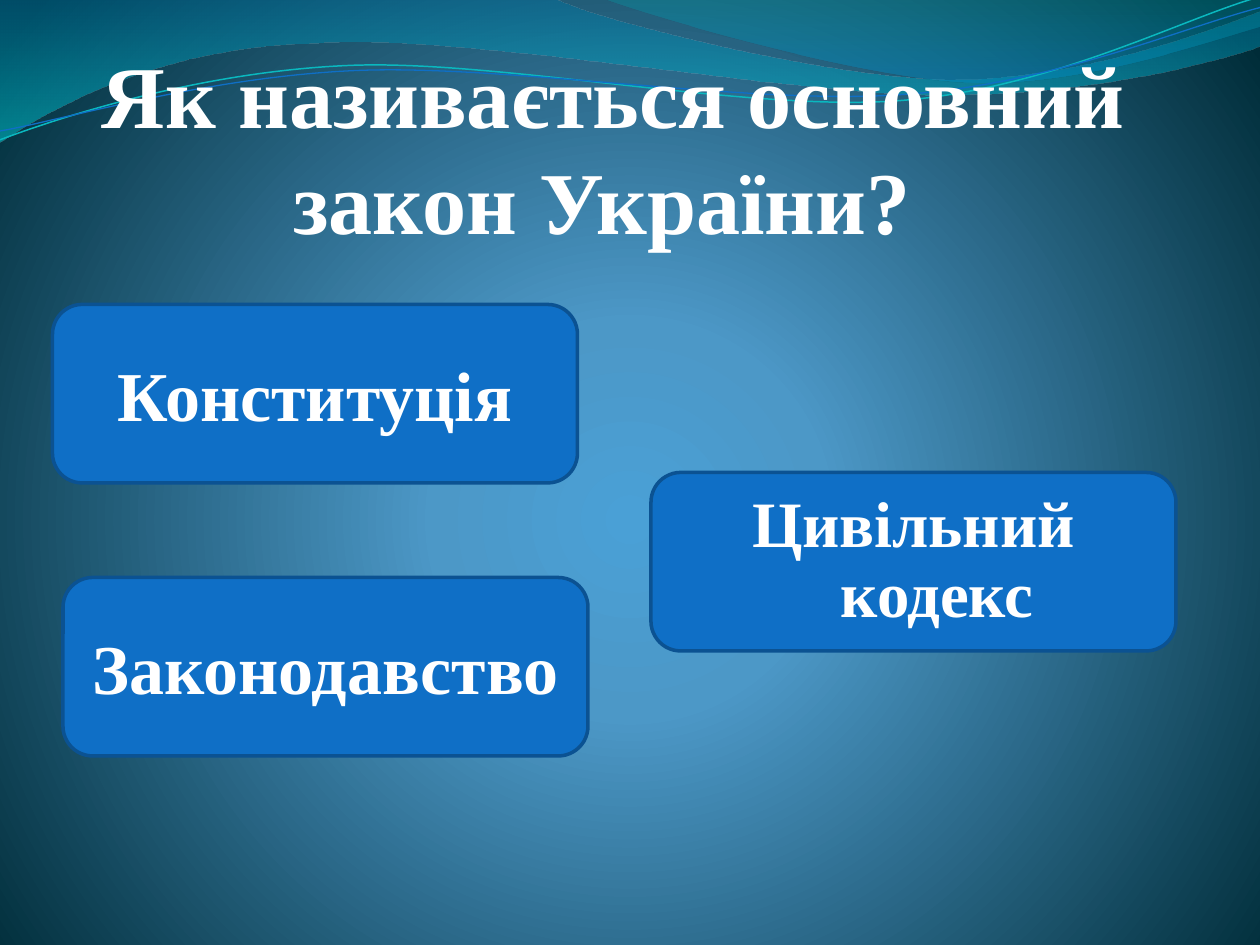
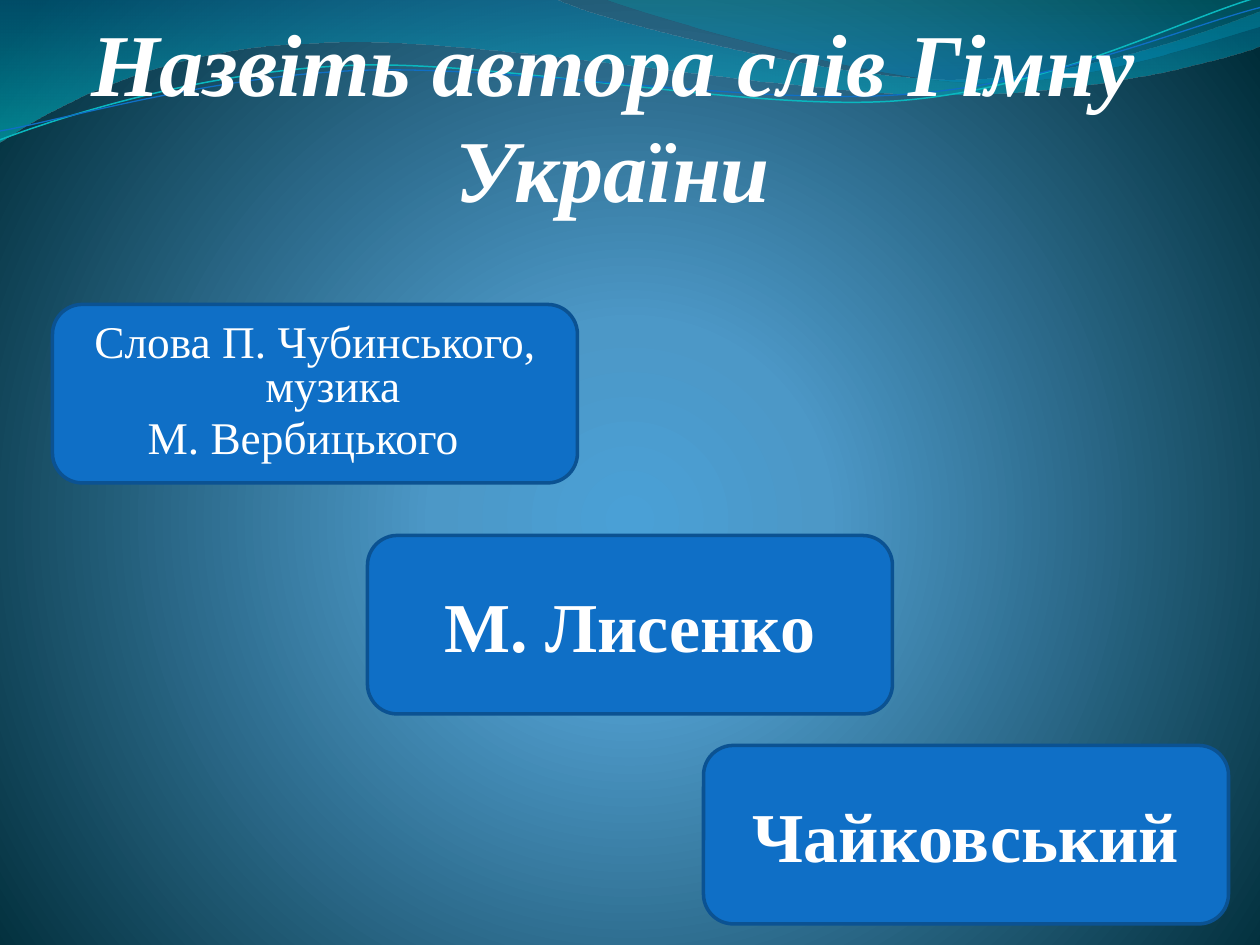
"""Builds two quiz slides on the constitution and anthem of Ukraine."""
from dataclasses import dataclass

from lxml import etree
from pptx import Presentation
from pptx.dml.color import RGBColor
from pptx.enum.shapes import MSO_SHAPE
from pptx.enum.text import MSO_ANCHOR, PP_ALIGN
from pptx.oxml.ns import qn
from pptx.util import Inches, Pt

ROUNDED = MSO_SHAPE.ROUNDED_RECTANGLE
CENTER = PP_ALIGN.CENTER
MIDDLE, BOTTOM = MSO_ANCHOR.MIDDLE, MSO_ANCHOR.BOTTOM


@dataclass(frozen=True)
class Theme:
    font: str = "Times New Roman"
    text: str = "FFFFFF"
    button: str = "0F6FC6"
    border: str = "0B5292"
    cyan: str = "0AB8BF"
    title_size: float = 50.4
    answer_size: float = 40
    background: tuple = (("4AA0D6", 0, 100), ("4C98C7", 25, 100), ("002C38", 100, 100))
    wide_band: tuple = (("0074A1", 0, 45), ("00C6CF", 100, 55))
    right_band: tuple = (("00A1A9", 0, 30), ("008BBF", 80, 45))


T = Theme()
GRID = 12
BUTTON_SIZE = (50, 17)
TITLE_LEFT, TITLE_SIZE = 0.58, (8.59, 1.75)
HANGING = 0.375

# Answer positions count twelfths of an inch.
QUESTIONS = [
    {"title": "Як називається основний закон України? ", "top": 0.25, "italic": False,
     "answers": [
         {"at": (5, 29), "lines": ["Конституція"]},
         {"at": (6, 55), "lines": ["Законодавство"]},
         {"at": (62, 45), "lines": ["Цивільний кодекс"], "size": 37, "spacing": 0.9},
     ]},
    {"title": "Назвіть автора слів Гімну України", "top": 0, "italic": True,
     "answers": [
         {"at": (5, 29), "lines": ["Слова П. Чубинського, музика ", "М. Вербицького "],
          "size": 25.9, "spacing": 0.8, "bold": False, "last_right": 0.1},
         {"at": (35, 51), "lines": ["М. Лисенко"]},
         {"at": (67, 71), "lines": ["Чайковський"]},
     ]},
]

# Each segment holds one end point, or two control points and an end point.
BANDS = [
    (T.wide_band, (0, 0), [
        [(4.4, -0.01)],
        [(4.76, 0.17), (6.64, 0.63), (7.58, 0.63)],
        [(8.53, 0.63), (9.58, 0.26), (10, 0.09)],
        [(10.01, 0.36)],
        [(9.83, 0.44), (8.7, 0.76), (7.46, 0.75)],
        [(6.22, 0.75), (3.82, 0.28), (2.57, 0.34)],
        [(1.29, 0.36), (0.46, 0.83), (-0.01, 1.13)],
        [(0, 0)],
    ]),
    (T.right_band, (4.79, -0.01), [
        [(5.09, 0.11), (6.82, 0.62), (7.69, 0.65)],
        [(8.56, 0.69), (9.61, 0.32), (10, 0.21)],
        [(10, 0)],
        [(4.79, -0.01)],
    ]),
]
WAVES = [
    (T.cyan, 0.85, (0, 1.11), [
        [(0.48, 0.93), (1.58, 0.57), (2.77, 0.52)],
        [(3.95, 0.47), (5.93, 0.89), (7.13, 0.8)],
        [(8.33, 0.71), (9.38, 0.15), (9.98, -0.02)],
    ]),
    (T.button, 0.75, (0, 1.04), [
        [(0.47, 0.96), (1.64, 0.61), (2.83, 0.56)],
        [(4.03, 0.51), (5.97, 0.84), (7.17, 0.75)],
        [(8.36, 0.67), (9.41, 0.21), (10, 0.06)],
    ]),
]


def rgb(color):
    return RGBColor.from_string(color)


def set_gradient(fill, element, stops, radial=False):
    fill.gradient()
    grad = next(element.iter(qn("a:gradFill")))
    for child in list(grad):
        grad.remove(child)
    stop_list = etree.SubElement(grad, qn("a:gsLst"))
    for color, pos, alpha in stops:
        stop = etree.SubElement(stop_list, qn("a:gs"), pos=str(pos * 1000))
        clr = etree.SubElement(stop, qn("a:srgbClr"), val=color)
        if alpha < 100:
            etree.SubElement(clr, qn("a:alpha"), val=str(alpha * 1000))
    if radial:
        focus = etree.SubElement(grad, qn("a:path"))
        focus.set("path", "circle")
        etree.SubElement(focus, qn("a:fillToRect"),
                         l="10000", t="110000", r="10000", b="100000")
    else:
        etree.SubElement(grad, qn("a:lin"), ang="5400000", scaled="0")


def add_outline(s, start, segments, close):
    points = [(Inches(x), Inches(y)) for segment in segments for x, y in segment]
    builder = s.shapes.build_freeform(*map(Inches, start))
    builder.add_line_segments(points, close=close)
    sp = builder.convert_to_shape()
    sp.shadow.inherit = False
    lines = iter(list(sp.element.iter(qn("a:lnTo"))))
    for segment in segments:
        first, *rest = [next(lines) for _ in segment]
        if rest:
            first.tag = qn("a:cubicBezTo")
        for line in rest:
            first.append(line[0])
            line.getparent().remove(line)
    return sp


def add_backdrop(s):
    set_gradient(s.background.fill, s.element, T.background, radial=True)
    for stops, start, segments in BANDS:
        sp = add_outline(s, start, segments, True)
        set_gradient(sp.fill, sp.element, stops)
        sp.line.fill.background()
    for color, width, start, segments in WAVES:
        sp = add_outline(s, start, segments, False)
        sp.fill.background()
        sp.line.color.rgb = rgb(color)
        sp.line.width = Pt(width)


def add_run(p, text, size, bold=True, italic=False):
    p.alignment = CENTER
    r = p.add_run()
    r.text = text
    r.font.name = T.font
    r.font.size = Pt(size)
    r.font.bold = bold
    r.font.italic = italic
    r.font.color.rgb = rgb(T.text)


def add_title(s, text, top, italic):
    box = s.shapes.add_textbox(*map(Inches, (TITLE_LEFT, top, *TITLE_SIZE)))
    tf = box.text_frame
    tf.word_wrap = True
    tf.vertical_anchor = BOTTOM
    tf.margin_left = tf.margin_top = tf.margin_bottom = 0
    tf.margin_right = Inches(0.02)
    add_run(tf.paragraphs[0], text, T.title_size, italic=italic)


def add_answer(s, at, lines, size=T.answer_size, spacing=1.0, bold=True, last_right=0):
    sp = s.shapes.add_shape(ROUNDED, *(Inches(n / GRID) for n in (*at, *BUTTON_SIZE)))
    sp.shadow.inherit = False
    sp.fill.solid()
    sp.fill.fore_color.rgb = rgb(T.button)
    sp.line.color.rgb = rgb(T.border)
    sp.line.width = Pt(2)
    tf = sp.text_frame
    tf.word_wrap = True
    tf.vertical_anchor = MIDDLE
    for i, line in enumerate(lines):
        p = tf.add_paragraph() if i else tf.paragraphs[0]
        p.line_spacing = spacing
        p.space_before = Pt(size * 0.2)
        props = p._p.get_or_add_pPr()
        props.set("marL", str(Inches(HANGING)))
        props.set("indent", str(-Inches(HANGING)))
        add_run(p, line, size, bold)
    if last_right:
        props.set("marR", str(Inches(last_right)))


def main():
    prs = Presentation()
    prs.slide_width, prs.slide_height = Inches(10), Inches(7.5)
    for question in QUESTIONS:
        s = prs.slides.add_slide(prs.slide_layouts[6])
        add_backdrop(s)
        add_title(s, question["title"], question["top"], question["italic"])
        for answer in question["answers"]:
            add_answer(s, **answer)
    prs.save("out.pptx")


if __name__ == "__main__":
    main()
